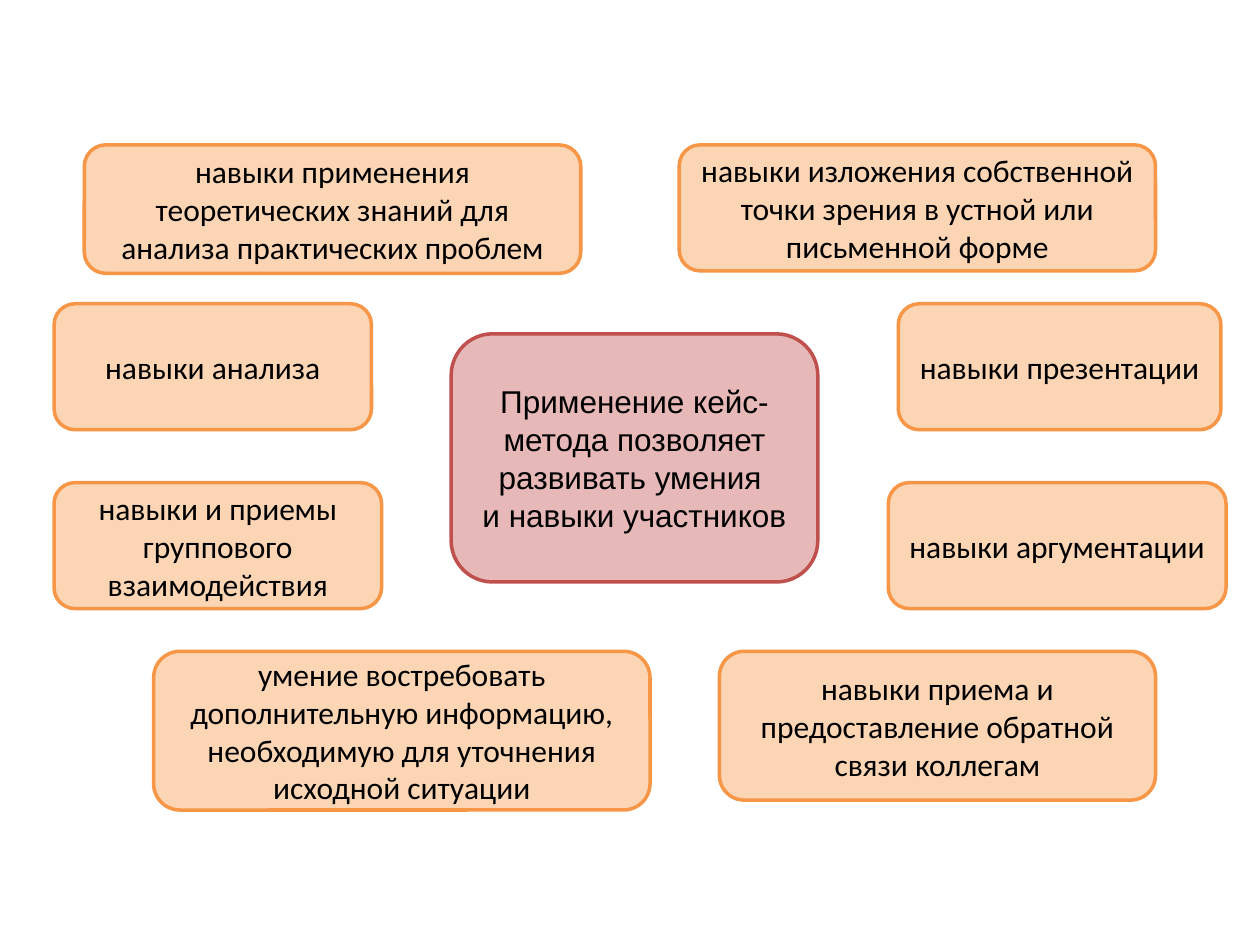
from dataclasses import dataclass

from lxml import etree
from pptx import Presentation
from pptx.dml.color import RGBColor
from pptx.enum.shapes import MSO_SHAPE
from pptx.enum.text import MSO_ANCHOR, PP_ALIGN
from pptx.oxml.ns import qn
from pptx.slide import Slide
from pptx.text.text import Font
from pptx.util import Pt

ROUNDED = MSO_SHAPE.ROUNDED_RECTANGLE
MIDDLE = MSO_ANCHOR.MIDDLE
CENTER = PP_ALIGN.CENTER

COLORS = {
    "text": "000000",
    "skill_fill": "FCD5B5",
    "skill_line": "F79646",
    "method_fill": "E6B9B8",
    "method_line": "C0504D",
    "method_text_outline": "953735",
}

TOP_ROW, UPPER_ROW, LOWER_ROW, BOTTOM_ROW = 82.8, 173.6, 275.8, 372.2
LEFT_EDGE = 30.9
ROW_HEIGHT = 72


@dataclass
class Box:
    left: float
    top: float
    width: float
    height: float
    paragraphs: list[str]
    style: str = "skill"
    font: str = "Calibri"
    outlined: bool = False


BOXES = [
    Box(257.8, 190.8, 209.5, 141.8,
        ["Применение кейс-метода позволяет развивать умения ", "и навыки участников"],
        "method", "Arial", True),
    Box(48.2, TOP_ROW, 283.7, 73.4,
        ["навыки применения теоретических знаний для анализа практических проблем"]),
    Box(507.6, LOWER_ROW, 193, ROW_HEIGHT, ["навыки аргументации"]),
    Box(LEFT_EDGE, LOWER_ROW, 187.2, ROW_HEIGHT,
        ["навыки и приемы группового взаимодействия"]),
    Box(513.3, UPPER_ROW, 184.4, ROW_HEIGHT, ["навыки презентации"]),
    Box(87.8, BOTTOM_ROW, 283.7, 90.7,
        ["умение востребовать дополнительную информацию, "
         "необходимую для уточнения исходной ситуации"]),
    Box(411.1, BOTTOM_ROW, 249.2, 85,
        ["навыки приема и предоставление обратной связи коллегам"]),
    Box(388.1, TOP_ROW, 272.2, ROW_HEIGHT,
        ["навыки изложения собственной точки зрения в устной или письменной форме"]),
    Box(LEFT_EDGE, UPPER_ROW, 181.4, ROW_HEIGHT, ["навыки анализа"]),
]


def color(name: str) -> RGBColor:
    return RGBColor.from_string(COLORS[name])


def outline_text(font: Font, color_name: str) -> None:
    line = etree.Element(qn("a:ln"), w=str(Pt(0.75)))
    fill = etree.SubElement(line, qn("a:solidFill"))
    etree.SubElement(fill, qn("a:srgbClr"), val=COLORS[color_name])
    font._element.insert(0, line)


def draw_box(slide: Slide, box: Box) -> None:
    shape = slide.shapes.add_shape(
        ROUNDED, Pt(box.left), Pt(box.top), Pt(box.width), Pt(box.height))
    shape.shadow.inherit = False
    shape.fill.solid()
    shape.fill.fore_color.rgb = color(f"{box.style}_fill")
    shape.line.color.rgb = color(f"{box.style}_line")
    shape.line.width = Pt(2)

    frame = shape.text_frame
    frame.word_wrap = True
    frame.vertical_anchor = MIDDLE
    for index, text in enumerate(box.paragraphs):
        paragraph = frame.add_paragraph() if index else frame.paragraphs[0]
        paragraph.alignment = CENTER
        run = paragraph.add_run()
        run.text = text
        run.font.name = box.font
        run.font.size = Pt(18)
        run.font.color.rgb = color("text")
        if box.outlined:
            outline_text(run.font, f"{box.style}_text_outline")


def main() -> None:
    presentation = Presentation()
    presentation.slide_width = Pt(720)
    presentation.slide_height = Pt(540)
    slide = presentation.slides.add_slide(presentation.slide_layouts.get_by_name("Blank"))
    for box in BOXES:
        draw_box(slide, box)
    presentation.save("out.pptx")


if __name__ == "__main__":
    main()
